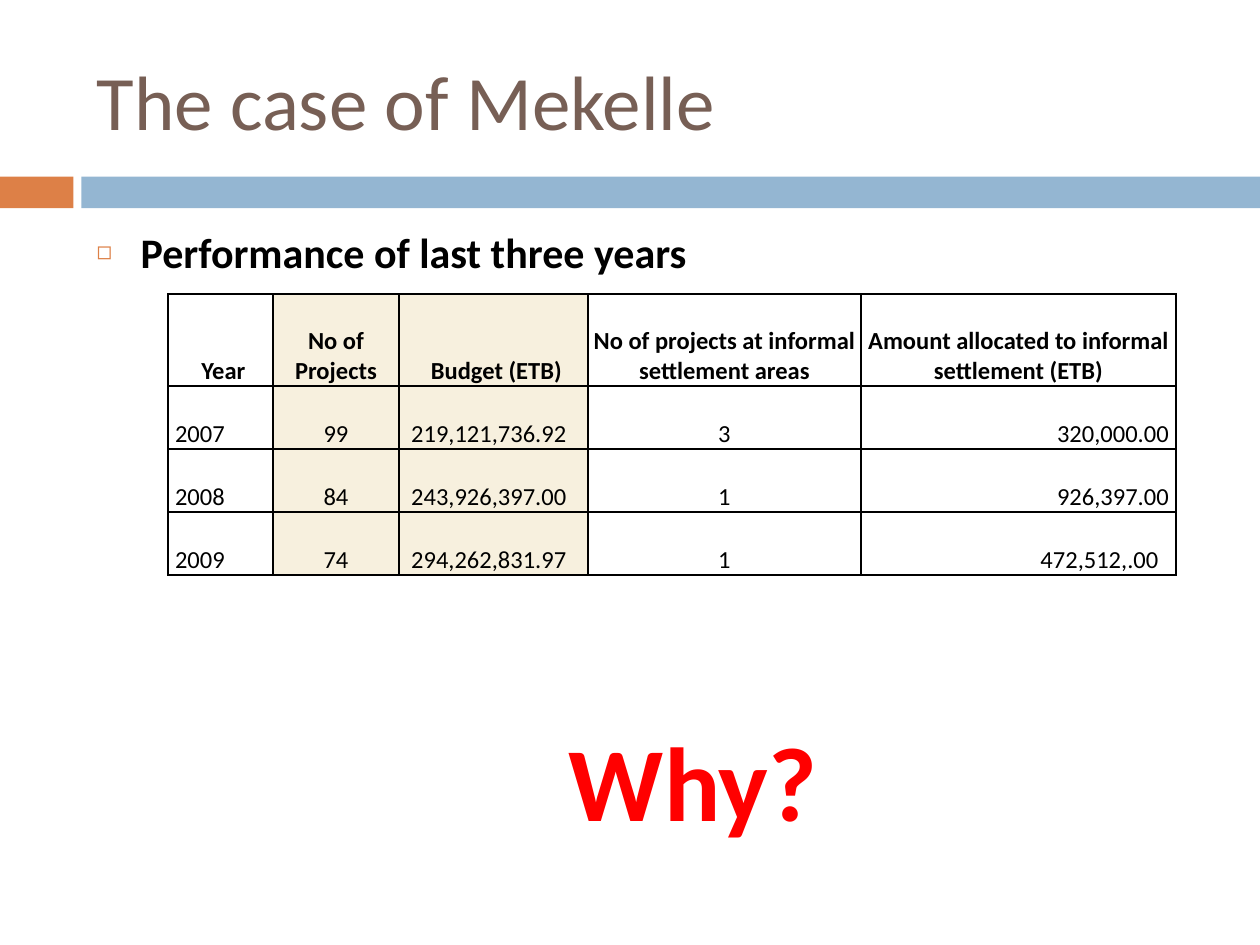
"""Build the slide on the case of Mekelle."""
from dataclasses import dataclass

from lxml.etree import SubElement
from pptx import Presentation
from pptx.dml.color import RGBColor
from pptx.enum.shapes import MSO_SHAPE
from pptx.enum.text import MSO_ANCHOR, MSO_AUTO_SIZE, PP_ALIGN
from pptx.oxml.ns import qn
from pptx.util import Pt

BLACK = RGBColor(0x00, 0x00, 0x00)
RED = RGBColor(0xFF, 0x00, 0x00)
ORANGE = RGBColor(0xDD, 0x80, 0x47)
BLUE = RGBColor(0x94, 0xB6, 0xD2)
BROWN = RGBColor(0x77, 0x5F, 0x55)
CREAM = RGBColor(0xF7, 0xF0, 0xDE)
FONT = "Calibri"
EDGE = 0.7


@dataclass
class Bar:
    left: float
    width: float
    color: RGBColor


@dataclass
class Column:
    header: str
    values: tuple[str, ...]
    width: float
    align: PP_ALIGN = PP_ALIGN.CENTER
    fill: RGBColor | None = None
    left: float = EDGE
    right: float = EDGE
    header_left: float = EDGE


BARS = [Bar(0, 42, ORANGE), Bar(46.5, 673.5, BLUE)]
COLUMNS = [
    Column("Year", ("2007", "2008", "2009"), 60, PP_ALIGN.LEFT, left=4, header_left=4),
    Column("No of Projects", ("99", "84", "74"), 72, fill=CREAM),
    Column("Budget (ETB)", ("219,121,736.92", "243,926,397.00", "294,262,831.97"),
           108, PP_ALIGN.LEFT, CREAM, left=7, header_left=4),
    Column("No of projects at informal settlement areas", ("3", "1", "1"), 156),
    Column("Amount allocated to informal settlement (ETB)",
           ("320,000.00", "926,397.00", "472,512,.00"), 180, PP_ALIGN.RIGHT, right=4),
]
ROW_HEIGHTS = [52.5, 36, 36, 36]


def write(p, text: str, *, size: float, color: RGBColor = BLACK, bold: bool = False,
          align: PP_ALIGN = PP_ALIGN.LEFT, before: float = 0) -> None:
    p.alignment = align
    p.space_before = Pt(before)
    r = p.add_run()
    r.text = text
    r.font.name, r.font.size, r.font.bold = FONT, Pt(size), bold
    r.font.color.rgb = color


def place(sp, left: float, top: float, width: float, height: float) -> None:
    sp.left, sp.top, sp.width, sp.height = Pt(left), Pt(top), Pt(width), Pt(height)


def set_bullet(p, margin: float, indent: float, char: str = "") -> None:
    pPr = p._p.get_or_add_pPr()
    pPr.set("marL", str(Pt(margin)))
    pPr.set("indent", str(Pt(indent)))
    if not char:
        SubElement(pPr, qn("a:buNone"))
        return
    SubElement(SubElement(pPr, qn("a:buClr")), qn("a:srgbClr"), val=str(ORANGE))
    SubElement(pPr, qn("a:buSzPct"), val="60000")
    SubElement(pPr, qn("a:buChar"), char=char)


def draw_bar(s, bar: Bar) -> None:
    sp = s.shapes.add_shape(MSO_SHAPE.RECTANGLE, Pt(bar.left), Pt(101), Pt(bar.width), Pt(18))
    sp.shadow.inherit = False
    sp.fill.solid()
    sp.fill.fore_color.rgb = bar.color
    sp.line.fill.background()


def format_cell(cell, fill: RGBColor | None, left: float, right: float) -> None:
    cell.vertical_anchor = MSO_ANCHOR.BOTTOM
    cell.margin_left, cell.margin_right = Pt(left), Pt(right)
    cell.margin_top, cell.margin_bottom = Pt(EDGE), 0
    tcPr = cell._tc.get_or_add_tcPr()
    for side in "LRTB":
        ln = SubElement(tcPr, qn(f"a:ln{side}"), w=str(Pt(1)))
        SubElement(SubElement(ln, qn("a:solidFill")), qn("a:srgbClr"), val=str(BLACK))
    if fill is None:
        cell.fill.background()
    else:
        cell.fill.solid()
        cell.fill.fore_color.rgb = fill


def draw_table(s, columns: list[Column]) -> None:
    frame = s.shapes.add_table(len(ROW_HEIGHTS), len(columns), Pt(96), Pt(168),
                               Pt(sum(c.width for c in columns)), Pt(sum(ROW_HEIGHTS)))
    table = frame.table
    table.first_row = table.horz_banding = False
    for row, height in zip(table.rows, ROW_HEIGHTS):
        row.height = Pt(height)
    for j, col in enumerate(columns):
        table.columns[j].width = Pt(col.width)
        for i, text in enumerate((col.header, *col.values)):
            cell = table.cell(i, j)
            head = i == 0
            format_cell(cell, col.fill, col.header_left if head else col.left,
                        EDGE if head else col.right)
            write(cell.text_frame.paragraphs[0], text, size=14, bold=head,
                  align=PP_ALIGN.CENTER if head else col.align)
    table.cell(3, 4).margin_right = Pt(10)


def main() -> None:
    prs = Presentation()
    prs.slide_width, prs.slide_height = Pt(720), Pt(540)
    s = prs.slides.add_slide(prs.slide_layouts[1])
    for bar in BARS:
        draw_bar(s, bar)

    title = s.shapes.title
    place(title, 48, 18, 642, 78)
    title.text_frame.vertical_anchor = MSO_ANCHOR.MIDDLE
    write(title.text_frame.paragraphs[0], "The case of Mekelle", size=44, color=BROWN)

    body = s.placeholders[1]
    place(body, 48, 126, 642, 354)
    tf = body.text_frame
    tf.auto_size = MSO_AUTO_SIZE.NONE
    p = tf.paragraphs[0]
    write(p, "Performance of last three years", size=24, bold=True, before=7)
    set_bullet(p, 25.2, -25.2, "◻")
    p = tf.add_paragraph()
    p.level = 1
    write(p, "Why?", size=60, color=RED, bold=True, align=PP_ALIGN.CENTER, before=251)
    set_bullet(p, 54, 0)

    draw_table(s, COLUMNS)
    prs.save("out.pptx")


if __name__ == "__main__":
    main()
